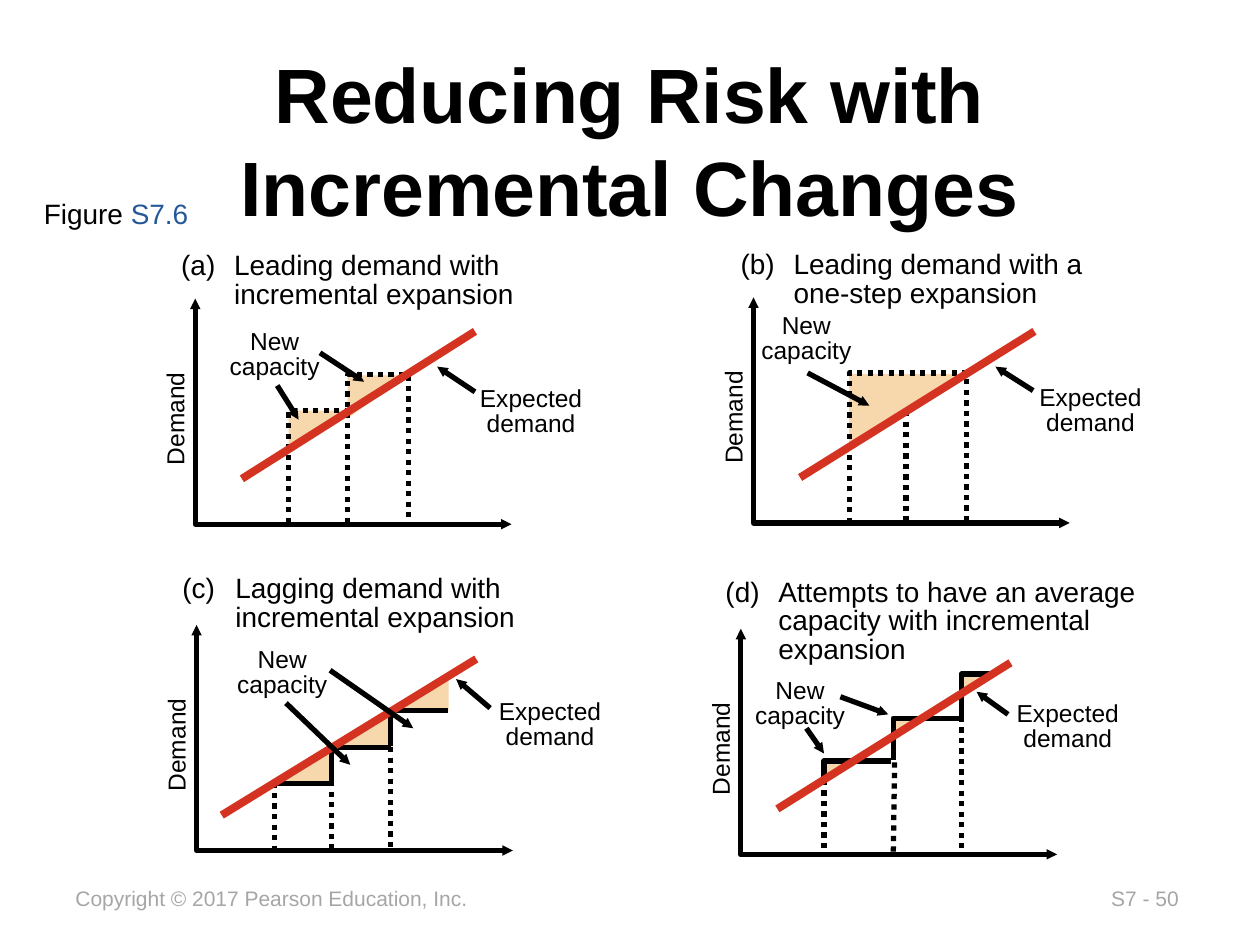
from dataclasses import dataclass

from lxml.etree import SubElement
from pptx import Presentation
from pptx.dml.color import RGBColor
from pptx.enum.dml import MSO_LINE
from pptx.enum.shapes import MSO_CONNECTOR
from pptx.enum.text import MSO_ANCHOR, MSO_AUTO_SIZE, PP_ALIGN
from pptx.oxml.ns import qn
from pptx.util import Inches, Pt


@dataclass(frozen=True)
class Theme:
    font: str = "Arial"
    ink: str = "000000"
    trend: str = "D33320"
    capacity: str = "F7D7AC"
    footer: str = "A6A6A6"
    reference: str = "255898"
    title_size: int = 44
    caption_size: int = 16
    label_size: int = 14
    footer_size: int = 12
    line_width: float = 3
    trend_width: float = 4.5


THEME = Theme()
CENTERED = {"alignment": PP_ALIGN.CENTER}
TIGHT = {"line_spacing": 0.85}

PANELS = [
    {
        "caption": ("(a)\tLeading demand with incremental expansion", (1.34, 1.96, 3.14, 0.57)),
        "axis": (1.55, 2.37),
        "trend": [(1.92, 3.8), (3.77, 2.63)],
        "areas": [[(2.76, 3.32), (2.76, 2.98), (3.24, 2.98)],
                  [(2.29, 3.53), (2.29, 3.26), (2.84, 3.26)]],
        "dotted": [[(2.29, 4.15), (2.29, 3.26), (2.75, 3.26)],
                   [(2.76, 4.15), (2.76, 2.97), (3.24, 2.97), (3.24, 4.15)]],
        "steps": [],
        "new": (1.68, 2.57),
        "expected": (3.62, 3.03),
        "arrows": [[(2.2, 3.06), (2.37, 3.33)], [(2.54, 2.8), (2.89, 3.03)],
                   [(3.77, 3.11), (3.47, 2.91)]],
    },
    {
        "caption": ("(b)\tLeading demand with a one-step expansion", (5.78, 1.95, 3.14, 0.57)),
        "axis": (5.98, 2.36),
        "trend": [(6.35, 3.79), (8.21, 2.63)],
        "areas": [[(6.74, 3.54), (6.74, 2.97), (7.67, 2.97)]],
        "dotted": [[(7.19, 4.14), (7.19, 3.26)],
                   [(6.74, 4.15), (6.74, 2.96), (7.67, 2.96), (7.67, 4.14)]],
        "steps": [],
        "new": (5.9, 2.45),
        "expected": (8.06, 3.02),
        "arrows": [[(6.41, 2.96), (6.9, 3.22)], [(8.2, 3.1), (7.9, 2.91)]],
    },
    {
        "caption": ("(c)\tLagging demand with incremental expansion", (1.35, 4.52, 3.53, 0.57)),
        "axis": (1.56, 4.96),
        "trend": [(1.76, 6.47), (3.78, 5.23)],
        "areas": [[(2.66, 5.94), (3.12, 5.65), (3.12, 5.94)],
                  [(2.18, 6.22), (2.62, 5.94), (2.62, 6.22)],
                  [(3.15, 5.64), (3.56, 5.36), (3.56, 5.64)]],
        "dotted": [[(2.18, 6.21), (2.18, 6.75)], [(2.63, 6.2), (2.63, 6.74)],
                   [(3.1, 5.93), (3.1, 6.74)]],
        "steps": [[(2.63, 6.21), (2.63, 5.93), (3.1, 5.93)],
                  [(3.1, 5.92), (3.1, 5.64), (3.56, 5.64)],
                  [(2.19, 6.22), (2.63, 6.22)]],
        "new": (1.74, 5.1),
        "expected": (3.77, 5.51),
        "arrows": [[(2.27, 5.58), (2.78, 6.07)], [(2.62, 5.32), (3.28, 5.78)],
                   [(3.89, 5.62), (3.62, 5.39)]],
    },
    {
        "caption": ("(d)\tAttempts to have an average capacity with incremental expansion",
                    (5.66, 4.55, 3.74, 0.8)),
        "axis": (5.88, 4.99),
        "trend": [(6.17, 6.42), (8.02, 5.26)],
        "areas": [[(6.54, 6.05), (6.76, 6.05), (6.54, 6.19)],
                  [(7.09, 5.69), (7.35, 5.69), (7.09, 5.85)],
                  [(7.65, 5.35), (7.89, 5.35), (7.65, 5.49)]],
        "dotted": [[(6.54, 6.19), (6.54, 6.78)], [(7.1, 6.05), (7.09, 6.77)],
                   [(7.63, 5.69), (7.63, 6.77)]],
        "steps": [[(6.54, 6.18), (6.54, 6.04), (7.07, 6.04)],
                  [(7.09, 6.03), (7.09, 5.7), (7.62, 5.7)],
                  [(7.63, 5.69), (7.63, 5.35), (7.89, 5.35)]],
        "new": (5.85, 5.34),
        "expected": (7.88, 5.53),
        "arrows": [[(8, 5.67), (7.75, 5.49)], [(6.67, 5.53), (7.05, 5.67)],
                   [(6.4, 5.78), (6.54, 5.98)]],
    },
]


def set_values(target, values):
    for name, value in values.items():
        setattr(target, name, value)


def add_text(shapes, spans, place, size, wrap=True, paragraph_format=None, bold=False, frame_format=None):
    box = shapes.add_textbox(*map(Inches, place))
    set_values(box.text_frame, {"word_wrap": wrap, "auto_size": MSO_AUTO_SIZE.SHAPE_TO_FIT_TEXT,
                                **(frame_format or {})})
    para = box.text_frame.paragraphs[0]
    set_values(para, paragraph_format or {})
    for text, color in spans:
        span = para.add_run()
        span.text = text
        set_values(span.font, {"name": THEME.font, "size": Pt(size), "bold": bold})
        span.font.color.rgb = RGBColor.from_string(color)
    return box


def add_caption(shapes, text, place):
    box = add_text(shapes, [(text, THEME.ink)], place, THEME.caption_size, paragraph_format=TIGHT)
    properties = box.text_frame.paragraphs[0]._p.get_or_add_pPr()
    for name, value in {"marL": Inches(0.42), "indent": -Inches(0.42)}.items():
        properties.set(name, str(value))


def add_outline(shapes, points, close):
    corners = [(Inches(x), Inches(y)) for x, y in points]
    builder = shapes.build_freeform(*corners[0])
    builder.add_line_segments(corners[1:], close=close)
    outline = builder.convert_to_shape()
    outline.shadow.inherit = False
    return outline


def add_area(shapes, points):
    area = add_outline(shapes, points, True)
    area.fill.solid()
    area.fill.fore_color.rgb = RGBColor.from_string(THEME.capacity)
    area.line.fill.background()


def add_stroke(shapes, points, color=THEME.ink, width=THEME.line_width, dash=None, ends=()):
    if len(points) == 2:
        stroke = shapes.add_connector(MSO_CONNECTOR.STRAIGHT,
                                      *(Inches(value) for point in points for value in point))
    else:
        stroke = add_outline(shapes, points, False)
        stroke.fill.background()
    stroke.line.color.rgb = RGBColor.from_string(color)
    set_values(stroke.line, {"width": Pt(width), "dash_style": dash})
    for end in ends:
        SubElement(stroke.line._get_or_add_ln(), qn(f"a:{end}"), type="triangle", w="sm", len="sm")
    if len(points) == 2:
        SubElement(stroke._element.spPr, qn("a:effectLst"))


def add_panel(slide, panel):
    shapes = slide.shapes.add_group_shape().shapes
    left, top = panel["axis"]
    bottom = top + 1.79
    for points in panel["areas"]:
        add_area(shapes, points)
    for points in panel["dotted"]:
        add_stroke(shapes, points, dash=MSO_LINE.ROUND_DOT)
    for points in panel["steps"]:
        add_stroke(shapes, points)
    add_stroke(shapes, [(left, top), (left, bottom), (left + 2.51, bottom)], ends=("headEnd", "tailEnd"))
    add_stroke(shapes, panel["trend"], THEME.trend, THEME.trend_width)
    add_caption(shapes, *panel["caption"])
    demand = add_text(shapes, [("Demand", THEME.ink)], (left - 0.65, top + 0.77, 0.97, 0.33),
                      THEME.label_size, wrap=False)
    demand.rotation = 270
    for text, key, width in [("New capacity", "new", 1), ("Expected demand", "expected", 1.19)]:
        add_text(shapes, [(text, THEME.ink)], (*panel[key], width, 0.51), THEME.label_size,
                 paragraph_format={**CENTERED, **TIGHT})
    for points in panel["arrows"]:
        add_stroke(shapes, points, ends=("tailEnd",))


def main():
    deck = Presentation()
    set_values(deck, {"slide_width": Inches(10), "slide_height": Inches(7.5)})
    slide = deck.slides.add_slide(deck.slide_layouts[6])
    for text, place in [("S7 - 50", (8.72, 6.98, 0.76, 0.3)),
                        ("Copyright © 2017 Pearson Education, Inc.", (0.5, 6.98, 3.35, 0.3))]:
        add_text(slide.shapes, [(text, THEME.footer)], place, THEME.footer_size, wrap=False)
    add_text(slide.shapes, [("Reducing Risk with Incremental Changes", THEME.ink)],
             (0.75, 0.28, 8.5, 1.65), THEME.title_size, paragraph_format=CENTERED, bold=True,
             frame_format={"vertical_anchor": MSO_ANCHOR.MIDDLE, "auto_size": MSO_AUTO_SIZE.NONE})
    add_text(slide.shapes, [("Figure ", THEME.ink), ("S7.6", THEME.reference)],
             (0.25, 1.51, 1.4, 0.37), THEME.caption_size, wrap=False)
    for panel in PANELS:
        add_panel(slide, panel)
    deck.save("out.pptx")


if __name__ == "__main__":
    main()
